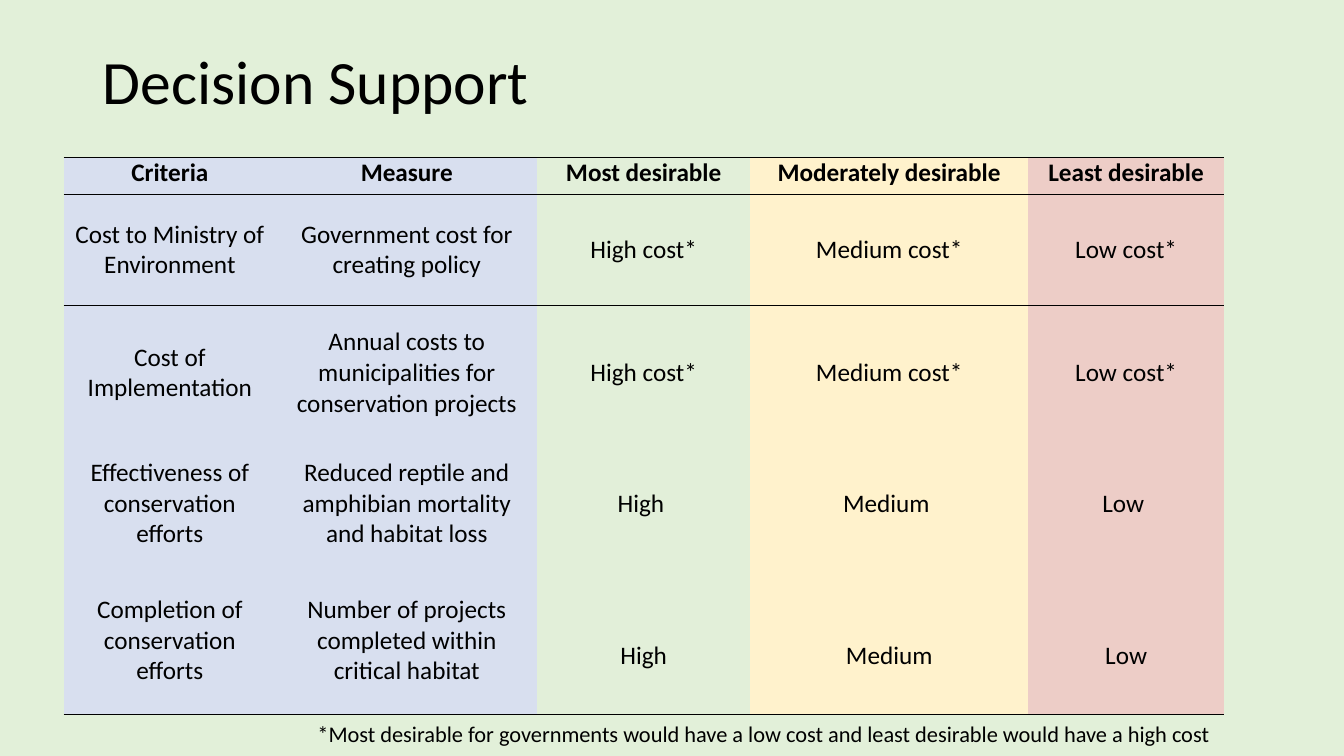
from lxml.etree import SubElement
from pptx import Presentation
from pptx.dml.color import RGBColor
from pptx.enum.text import MSO_ANCHOR, MSO_AUTO_SIZE, PP_ALIGN
from pptx.oxml.ns import qn
from pptx.util import Inches, Pt

BLACK = RGBColor(0x00, 0x00, 0x00)
PALE_GREEN = RGBColor(0xE2, 0xF0, 0xD9)
BLUE = RGBColor(0xD8, 0xDF, 0xEF)
GREEN = RGBColor(0xE2, 0xEF, 0xD9)
YELLOW = RGBColor(0xFF, 0xF2, 0xCC)
RED = RGBColor(0xED, 0xCD, 0xC7)

NO_STYLE_NO_GRID = "{2D5ABB26-0587-4C30-8999-92F81FD0307C}"
WIDTH, HEIGHT = 13.33, 7.5

COLUMN_WIDTHS = [2.11, 2.59, 2.11, 2.76, 1.94]
COLUMN_FILLS = [BLUE, BLUE, GREEN, YELLOW, RED]
ROW_HEIGHTS = [0.37, 1.1, 1.34, 1.25, 1.47]
ROWS = [
    ["Criteria", "Measure", "Most desirable", "Moderately desirable", "Least desirable"],
    ["Cost to Ministry of Environment", "Government cost for creating policy",
     "High cost*", "Medium cost*", "Low cost*"],
    ["Cost of Implementation", "Annual costs to municipalities for conservation projects",
     "High cost*", "Medium cost*", "Low cost*"],
    ["Effectiveness of conservation efforts",
     "Reduced reptile and amphibian mortality and habitat loss",
     "High ", "Medium ", "Low "],
    ["Completion of conservation efforts",
     "Number of projects completed within critical habitat",
     "High", "Medium", "Low"],
]
FOOTNOTE = ("*Most desirable for governments would have a low cost "
            "and least desirable would have a high cost")


class SlideBuilder:
    """Holds the style and the slide; boxes are shares of the slide's size."""

    def __init__(self, prs, font="Calibri", color=BLACK):
        self.prs, self.font, self.color = prs, font, color
        self.slide = prs.slides.add_slide(prs.slide_layouts[5])

    def box(self, x, y, w, h):
        sw, sh = self.prs.slide_width, self.prs.slide_height
        return int(x * sw), int(y * sh), int(w * sw), int(h * sh)

    def background(self, color):
        fill = self.slide.background.fill
        fill.solid()
        fill.fore_color.rgb = color

    def set_text(self, tf, text, size, bold=False, align=PP_ALIGN.LEFT):
        tf.text = text
        p = tf.paragraphs[0]
        p.alignment = align
        font = p.runs[0].font
        font.name, font.size, font.bold = self.font, Pt(size), bold
        font.color.rgb = self.color
        return p

    def title(self, text, share):
        sp = self.slide.shapes.title
        sp.left, sp.top, sp.width, sp.height = self.box(*share)
        sp.text_frame.vertical_anchor = MSO_ANCHOR.MIDDLE
        self.set_text(sp.text_frame, text, 44).line_spacing = 0.9

    def note(self, text, share):
        tf = self.slide.shapes.add_textbox(*self.box(*share)).text_frame
        tf.word_wrap = True
        tf.auto_size = MSO_AUTO_SIZE.SHAPE_TO_FIT_TEXT
        self.set_text(tf, text, 16)

    def rule(self, cell, side):
        ln = SubElement(cell._tc.get_or_add_tcPr(), qn(f"a:{side}"), w=str(Pt(1)))
        SubElement(SubElement(ln, qn("a:solidFill")), qn("a:srgbClr"), val=str(self.color))

    def table(self, rows, widths, heights, fills, share):
        frame = self.slide.shapes.add_table(len(rows), len(widths), *self.box(*share))
        table = frame.table
        table.first_row = table.horz_banding = False
        table._tbl.tblPr.find(qn("a:tableStyleId")).text = NO_STYLE_NO_GRID
        for column, width in zip(table.columns, widths):
            column.width = Inches(width)
        last = len(rows) - 1
        for r, (row, height) in enumerate(zip(rows, heights)):
            table.rows[r].height = Inches(height)
            for c, (text, color) in enumerate(zip(row, fills)):
                cell = table.cell(r, c)
                # Rules above and below the header, and below the last row
                if r <= 1:
                    self.rule(cell, "lnT")
                if r in (0, last):
                    self.rule(cell, "lnB")
                cell.fill.solid()
                cell.fill.fore_color.rgb = color
                cell.margin_left = cell.margin_right = Inches(0.07)
                # Ratings in the last row sit half a line lower
                cell.margin_top = Inches(0.3 if r == last and c >= 2 else 0)
                cell.margin_bottom = 0
                cell.vertical_anchor = MSO_ANCHOR.MIDDLE if r else MSO_ANCHOR.TOP
                self.set_text(cell.text_frame, text, 18, bold=r == 0, align=PP_ALIGN.CENTER)


def main():
    prs = Presentation()
    prs.slide_width, prs.slide_height = Inches(WIDTH), Inches(HEIGHT)
    s = SlideBuilder(prs)
    s.background(PALE_GREEN)

    # Heading
    s.title("Decision Support", (0.92 / WIDTH, 0.11 / HEIGHT, 11.5 / WIDTH, 1.45 / HEIGHT))

    # Criteria table
    s.table(ROWS, COLUMN_WIDTHS, ROW_HEIGHTS, COLUMN_FILLS,
            (0.63 / WIDTH, 1.56 / HEIGHT, sum(COLUMN_WIDTHS) / WIDTH, sum(ROW_HEIGHTS) / HEIGHT))

    # Footnote
    s.note(FOOTNOTE, (3.05 / WIDTH, 7.1 / HEIGHT, 9.36 / WIDTH, 0.37 / HEIGHT))

    prs.save("out.pptx")


if __name__ == "__main__":
    main()
